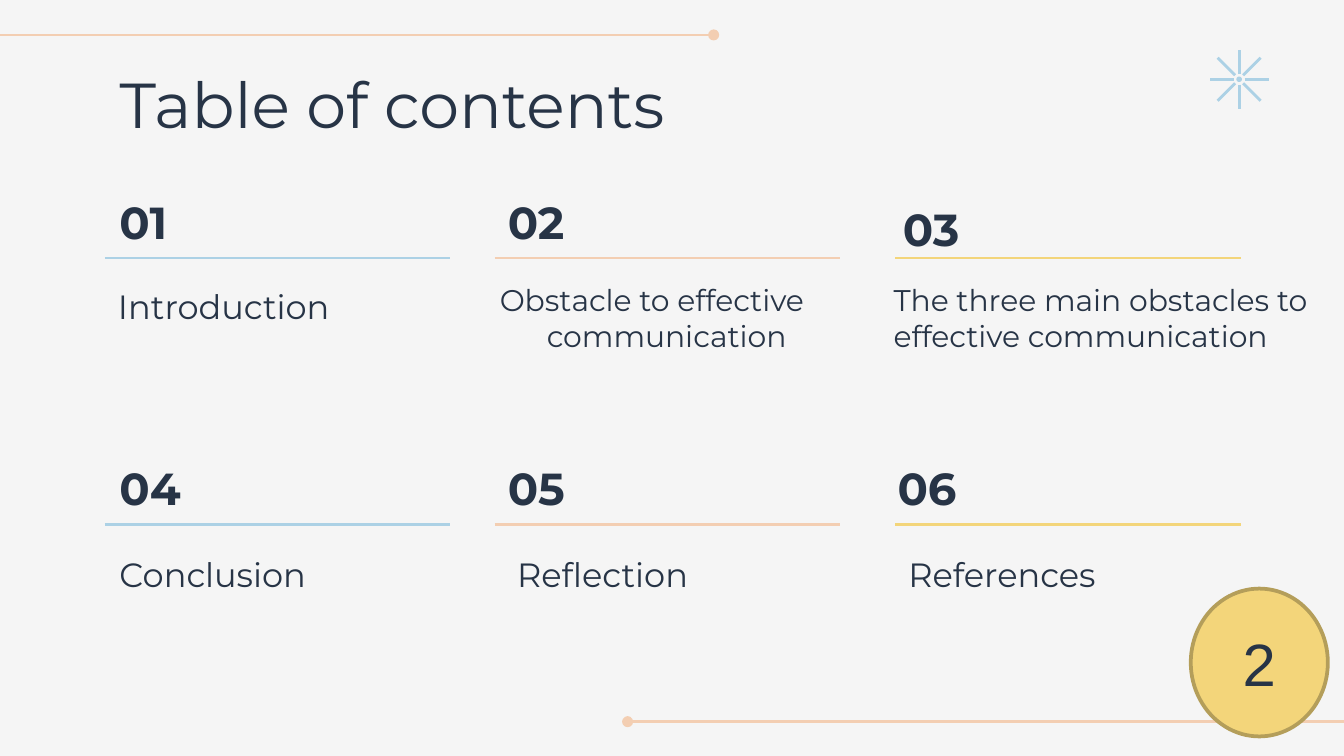
from dataclasses import dataclass
from typing import Optional

import lxml.etree
import pptx
import pptx.dml.color
import pptx.enum.shapes
import pptx.enum.text
import pptx.oxml.ns
import pptx.util
from pptx.util import Inches

Anchor = pptx.enum.text.MSO_ANCHOR
Align = pptx.enum.text.PP_ALIGN
OVAL = pptx.enum.shapes.MSO_SHAPE.OVAL
qn = pptx.oxml.ns.qn


@dataclass(frozen=True)
class Theme:
    background: str = "F5F5F5"
    ink: str = "273446"
    blue: str = "ACD1E5"
    peach: str = "F3CEB2"
    yellow: str = "F3D57A"
    gold: str = "B49E5A"
    pink: str = "FCA8A2"
    font: str = "Montserrat"
    page_font: str = "Arial"
    title: float = 34
    number: float = 24
    topic: float = 18
    long_topic: float = 16
    page: float = 32
    line: float = 1.5


@dataclass(frozen=True)
class Box:
    left: float
    top: float
    width: float
    height: float

    def lengths(self) -> list:
        return [Inches(v) for v in (self.left, self.top, self.width, self.height)]


@dataclass(frozen=True)
class Entry:
    number_at: tuple[float, float]
    topic: str
    topic_box: Box
    size: float
    anchor: Anchor = Anchor.BOTTOM
    hanging: Optional[tuple[float, float]] = None


T = Theme()
ENTRIES = [
    Entry((0.79, 1.35), "Introduction", Box(0.78, 2, 2.64, 0.53), T.topic),
    Entry((3.68, 1.35), "Obstacle to effective communication",
          Box(3.47, 2.1, 2.99, 0.53), T.long_topic, Anchor.MIDDLE, (0.5, -0.35)),
    Entry((6.62, 1.4), "The three main obstacles to effective communication",
          Box(6.55, 1.87, 3.31, 0.86), T.long_topic),
    Entry((0.79, 3.33), "Conclusion", Box(0.79, 3.99, 2.64, 0.53), T.topic),
    Entry((3.68, 3.33), "Reflection", Box(3.75, 3.99, 2.9, 0.53), T.topic),
    Entry((6.58, 3.33), "References", Box(6.66, 3.99, 2.64, 0.53), T.topic),
]
RULES = [(0.78, T.blue), (3.68, T.peach), (6.66, T.yellow)]
RULE_TOPS = [1.92, 3.9]
RULE_WIDTH = 2.57


def rgb(value: str) -> pptx.dml.color.RGBColor:
    return pptx.dml.color.RGBColor.from_string(value)


def write(s, text: str, *, size: float, font: str = T.font, color: str = T.ink,
          bold: bool = False, align: Align = Align.LEFT,
          anchor: Anchor = Anchor.MIDDLE, spacing: float = 1.0,
          inset: float = 0.1, hanging: Optional[tuple[float, float]] = None) -> None:
    """Fill a shape's text frame; hanging is (left margin, first-line indent)."""
    tf = s.text_frame
    tf.word_wrap = True
    tf.auto_size = pptx.enum.text.MSO_AUTO_SIZE.NONE
    tf.vertical_anchor = anchor
    tf.margin_left = tf.margin_right = Inches(inset)
    tf.margin_top = tf.margin_bottom = Inches(inset)
    p = tf.paragraphs[0]
    p.alignment = align
    p.line_spacing = spacing
    if hanging:
        pPr = p._p.get_or_add_pPr()
        pPr.set("marL", str(Inches(hanging[0])))
        pPr.set("indent", str(Inches(hanging[1])))
    r = p.add_run()
    r.text = text
    r.font.name = font
    r.font.size = pptx.util.Pt(size)
    r.font.bold = bold
    r.font.color.rgb = rgb(color)


def add_text(slide, box: Box, text: str, **style) -> None:
    write(slide.shapes.add_textbox(*box.lengths()), text, **style)


def add_line(slide, start: tuple[float, float], end: tuple[float, float],
             color: str, dot: Optional[str] = None) -> None:
    """Draw a line; dot is "headEnd" or "tailEnd" for a round end."""
    line = slide.shapes.add_connector(
        pptx.enum.shapes.MSO_CONNECTOR.STRAIGHT,
        *[Inches(v) for v in (*start, *end)])
    line.line.color.rgb = rgb(color)
    line.line.width = pptx.util.Pt(T.line)
    if dot:
        ln = line.line._get_or_add_ln()
        lxml.etree.SubElement(ln, qn(f"a:{dot}"), type="oval")
    lxml.etree.SubElement(line._element.spPr, qn("a:effectLst"))


def add_oval(slide, box: Box, fill: str, outline: str, width: float):
    s = slide.shapes.add_shape(OVAL, *box.lengths())
    s.shadow.inherit = False
    s.fill.solid()
    s.fill.fore_color.rgb = rgb(fill)
    s.line.color.rgb = rgb(outline)
    s.line.width = pptx.util.Pt(width)
    return s


def add_star(slide, cx: float, cy: float) -> None:
    for dx in (-1, 0, 1):
        for dy in (-1, 0, 1):
            if dx == dy == 0:
                continue
            inner, outer = (0.03, 0.16) if dx and dy else (0.04, 0.22)
            add_line(slide, (cx + dx * inner, cy + dy * inner),
                     (cx + dx * outer, cy + dy * outer), T.blue)
    add_oval(slide, Box(cx - 0.01, cy - 0.01, 0.02, 0.02), T.pink, T.blue, T.line)


def main() -> None:
    prs = pptx.Presentation()
    prs.slide_width = Inches(10)
    prs.slide_height = prs.slide_width * 9 // 16
    slide = prs.slides.add_slide(prs.slide_layouts[5])
    slide.background.fill.solid()
    slide.background.fill.fore_color.rgb = rgb(T.background)

    title = slide.shapes.title
    title.left, title.top, title.width, title.height = Box(0.79, 0.49, 8.43, 0.63).lengths()
    write(title, "Table of contents", size=T.title, spacing=0.9)

    add_line(slide, (-0.01, 0.26), (5.31, 0.26), T.peach, "tailEnd")
    add_line(slide, (4.67, 5.37), (10, 5.37), T.peach, "headEnd")
    add_star(slide, 9.22, 0.59)

    for number, entry in enumerate(ENTRIES, 1):
        add_text(slide, Box(*entry.number_at, 2.64, 0.65), f"{number:02}",
                 size=T.number, bold=True, spacing=0.9)
        add_text(slide, entry.topic_box, entry.topic, size=entry.size,
                 anchor=entry.anchor, hanging=entry.hanging)
    for top in RULE_TOPS:
        for left, color in RULES:
            add_line(slide, (left, top), (left + RULE_WIDTH, top), color)

    badge = add_oval(slide, Box(8.86, 4.38, 1.02, 1.1), T.yellow, T.gold, 2)
    write(badge, "2", size=T.page, font=T.page_font, align=Align.CENTER, inset=0.05)
    prs.save("out.pptx")


if __name__ == "__main__":
    main()
